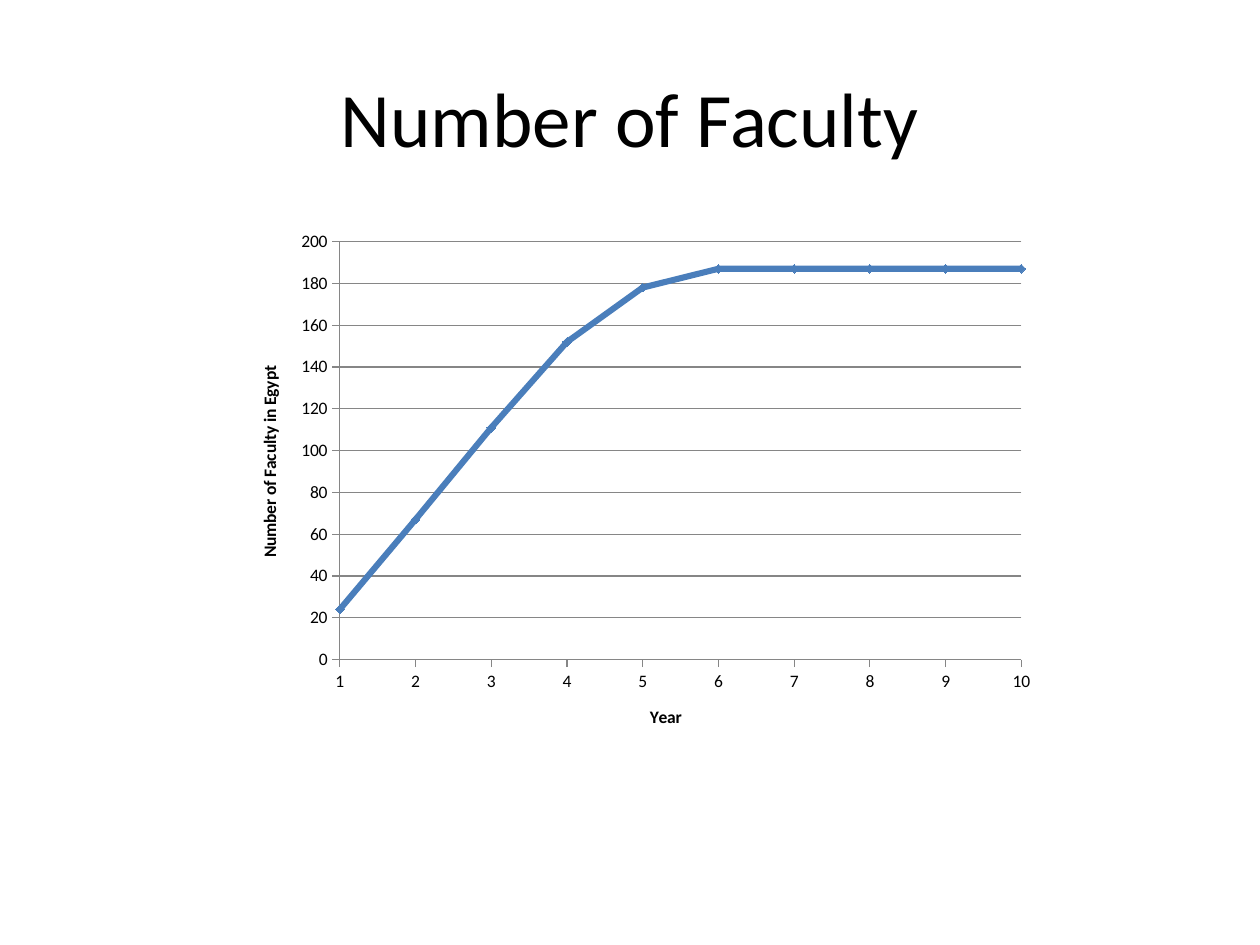
from lxml import etree
from pptx import Presentation
from pptx.chart.data import XyChartData
from pptx.dml.color import RGBColor
from pptx.enum.chart import XL_CHART_TYPE, XL_MARKER_STYLE, XL_TICK_MARK
from pptx.enum.text import MSO_ANCHOR, PP_ALIGN
from pptx.oxml.ns import qn
from pptx.util import Inches, Pt

COLORS = {"text": "000000", "line": "4A7EBB", "mark": "4F81BD", "axis": "868686"}
FACULTY = [24, 67, 111, 152, 178] + [187] * 5


def color(name):
    return RGBColor.from_string(COLORS[name])


class Deck:
    """Holds the style and the current slide."""

    font = "Calibri"

    def __init__(self):
        self.file = Presentation()
        self.file.slide_width, self.file.slide_height = Inches(10), Inches(7.5)
        self.slide = self.file.slides.add_slide(self.file.slide_layouts[6])

    def style(self, font, size, bold=False):
        values = {"name": self.font, "size": Pt(size), "bold": bold}
        for key, value in values.items():
            setattr(font, key, value)
        font.color.rgb = color("text")

    def title(self, text, *box):
        frame = self.slide.shapes.add_textbox(*map(Inches, box)).text_frame
        frame.word_wrap = True
        frame.vertical_anchor = MSO_ANCHOR.MIDDLE
        para = frame.paragraphs[0]
        para.text = text
        para.alignment = PP_ALIGN.CENTER
        self.style(para.runs[0].font, 44)

    def axis(self, axis, text, low, high, step, grid):
        values = {
            "minimum_scale": low,
            "maximum_scale": high,
            "major_unit": step,
            "major_tick_mark": XL_TICK_MARK.OUTSIDE,
            "minor_tick_mark": XL_TICK_MARK.NONE,
            "has_major_gridlines": grid,
            "has_title": True,
        }
        for key, value in values.items():
            setattr(axis, key, value)
        axis.tick_labels.number_format = "General"
        axis.tick_labels.number_format_is_linked = False
        lines = [axis.format.line]
        if grid:
            lines.append(axis.major_gridlines.format.line)
        for line in lines:
            line.color.rgb = color("axis")
            line.width = Pt(0.75)
        para = axis.axis_title.text_frame.paragraphs[0]
        para.text = text
        self.style(para.runs[0].font, 10, True)

    def place(self, chart, **area):
        """Fix the inner plot area as fractions of the chart."""
        plot = chart.element.find(".//" + qn("c:plotArea"))
        layout = plot.find(qn("c:layout"))
        if layout is None:
            layout = etree.Element(qn("c:layout"))
            plot.insert(0, layout)
        manual = etree.SubElement(layout, qn("c:manualLayout"))
        modes = {"layoutTarget": "inner", "xMode": "edge", "yMode": "edge"}
        for key, value in {**modes, **area}.items():
            etree.SubElement(manual, qn("c:" + key)).set("val", str(value))

    def curve(self, values, *box):
        data = XyChartData()
        points = data.add_series("Series 1")
        for year, value in enumerate(values, 1):
            points.add_data_point(year, value)
        chart = self.slide.shapes.add_chart(
            XL_CHART_TYPE.XY_SCATTER_SMOOTH, *map(Inches, box), data
        ).chart
        chart.has_legend = chart.has_title = False
        self.style(chart.font, 10)
        chart.plots[0].vary_by_categories = False
        self.axis(chart.category_axis, "Year", 1, 10, 1, False)
        self.axis(chart.value_axis, "Number of Faculty in Egypt", 0, 200, 20, True)
        self.place(chart, x=0.13, y=0.04, w=0.84, h=0.79)

        series = chart.plots[0].series[0]
        series.smooth = True
        series.format.line.color.rgb = color("line")
        series.format.line.width = Pt(3.5)
        mark = series.marker
        mark.style, mark.size = XL_MARKER_STYLE.DIAMOND, 5
        mark.format.fill.solid()
        mark.format.fill.fore_color.rgb = color("mark")
        mark.format.line.color.rgb = color("line")


def main():
    deck = Deck()
    deck.title("Number of Faculty", 0.5, 0.3, 9, 1.25)
    deck.curve(FACULTY, 1.86, 1.75, 6.44, 4.2)
    deck.file.save("out.pptx")


if __name__ == "__main__":
    main()
